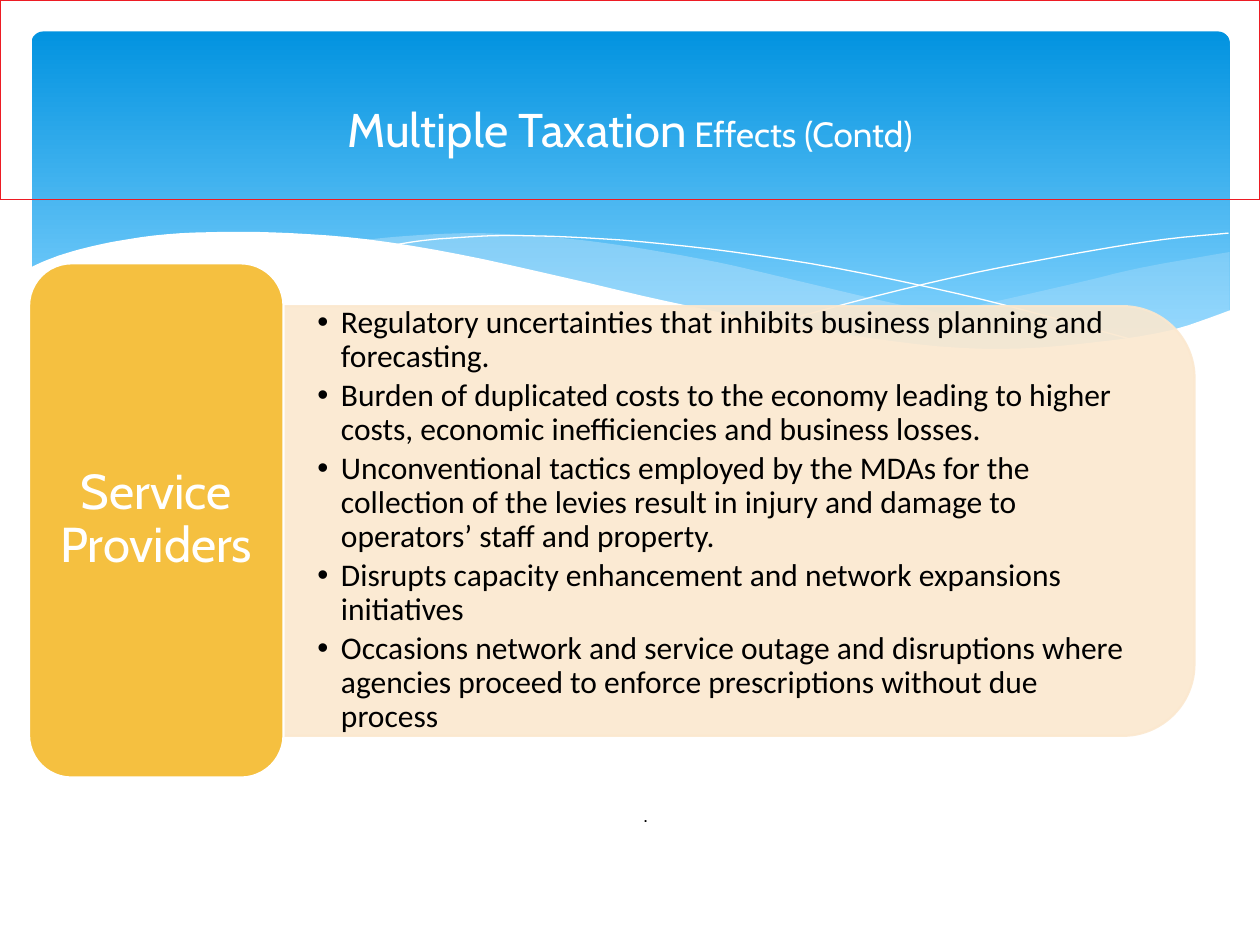
from lxml import etree
from pptx import Presentation
from pptx.dml.color import RGBColor
from pptx.enum.shapes import MSO_SHAPE
from pptx.enum.text import MSO_ANCHOR, PP_ALIGN
from pptx.oxml.ns import qn
from pptx.util import Pt

RECT = MSO_SHAPE.RECTANGLE
ROUND = MSO_SHAPE.ROUNDED_RECTANGLE
TAB = MSO_SHAPE.ROUND_2_SAME_RECTANGLE
MIDDLE, TOP = MSO_ANCHOR.MIDDLE, MSO_ANCHOR.TOP
CENTER, LEFT = PP_ALIGN.CENTER, PP_ALIGN.LEFT

HEX = {"deep": "0293E0", "sky": "83D3FE", "mist": "C6E7FC", "white": "FFFFFF",
       "red": "ED1C24", "cream": "FBE8CF", "gold": "F5C040", "black": "000000"}
RGB = {name: RGBColor.from_string(code) for name, code in HEX.items()}


def paint(shape, fill=None, line=None, width=0, alpha=None):
    """Set fill and line, with one opacity in percent for both."""
    shape.shadow.inherit = False
    for part, name in ((shape.fill, fill), (shape.line.fill, line)):
        if name is None:
            part.background()
            continue
        part.solid()
        part.fore_color.rgb = RGB[name]
    if line:
        shape.line.width = Pt(width)
    if alpha:
        for color in shape._element.spPr.iter(qn("a:srgbClr")):
            etree.SubElement(color, qn("a:alpha")).set("val", str(alpha * 1000))


def write(shape, paras, insets, font, anchor=MIDDLE, form=None):
    """Fill a text frame; each paragraph is a list of (text, size) runs."""
    frame = shape.text_frame
    left, top, right, bottom = map(Pt, insets)
    box = {"word_wrap": True, "vertical_anchor": anchor, "margin_left": left,
           "margin_top": top, "margin_right": right, "margin_bottom": bottom}
    for key, value in box.items():
        setattr(frame, key, value)
    for i, runs in enumerate(paras):
        para = frame.add_paragraph() if i else frame.paragraphs[0]
        for key, value in (form or {"alignment": CENTER}).items():
            setattr(para, key, value)
        for text, size in runs:
            run = para.add_run()
            run.text = text
            run.font.name, run.font.size = font[0], Pt(size)
            run.font.color.rgb = RGB[font[1]]


deck = Presentation()
deck.slide_width, deck.slide_height = Pt(720), Pt(540)
slide = deck.slides.add_slide(deck.slide_layouts[6])
shapes = slide.shapes

# Blue banner
banner = shapes.add_shape(ROUND, Pt(18), Pt(18), Pt(684.7), Pt(194.4))
banner.adjustments[0] = 0.034
paint(banner)
banner.fill.gradient()
banner.fill.gradient_angle = 270
for stop, (name, pos) in zip(banner.fill.gradient_stops,
                             (("deep", 0), ("sky", 0.9))):
    stop.color.rgb, stop.position = RGB[name], pos

# Waves: curves through key points, then straight corners
waves = [
    ([[(702.7, 144), (652, 153), (620, 160.6), (561, 174), (508, 185),
       (476, 190.8)],
      [(476, 190.8), (527, 197.3), (562, 199.4), (593, 199.4), (621, 198),
       (646, 194.4), (673, 189.4), (693, 181.5), (702.7, 177.8)]],
     [], {"fill": "mist", "alpha": 29}),
    ([[(643, 196.6), (602.6, 190.8), (558, 182.9), (508.3, 172.8),
       (452.9, 159.8), (409.7, 149.8), (370, 142.6), (334.8, 137.5),
       (302.4, 134.6), (273.6, 133.2), (247.7, 133.9), (225.4, 135.4),
       (205.9, 137.5)],
      [(205.9, 137.5), (246.2, 143.3), (290.9, 151.9), (323.3, 159.8),
       (381.6, 172.8), (432.7, 183.6), (478.8, 191.5), (520, 197.3),
       (556, 199.4), (589, 200.2), (617, 199.4), (643, 196.6)]],
     [], {"fill": "mist", "alpha": 40}),
    ([[(222.5, 140.4), (241.2, 137.5), (261.4, 135.8), (288.7, 134.6),
       (324, 135.4), (367.2, 138.2), (419, 144), (478.8, 153.4),
       (547.2, 167.8), (598.3, 180.7), (653, 195.8)]],
     [], {"line": "white"}),
    ([[(441.4, 185), (500.4, 169.2), (558.7, 155.5), (623.5, 143.3),
       (665.3, 136.8), (702, 133.2)]],
     [], {"line": "white"}),
    ([[(703.4, 177.1), (669.6, 188.6), (630, 195.1), (582.5, 199.2),
       (536.4, 198), (481, 190.8), (434.2, 182.9), (380.9, 172.1),
       (321.8, 158.4), (262.8, 145.4), (210.2, 136.8), (165.6, 133.2),
       (127.4, 132.5), (95, 133.9), (68.4, 137.5), (48.2, 141.8),
       (33.1, 146.2), (20.9, 151.2), (16.6, 153.4)]],
     [(16.6, 236.9), (703.4, 236.9)], {"fill": "white"}),
]
STEPS = 4
for curves, corners, style in waves:
    dots = []
    for keys in curves:
        ends = [keys[0], *keys, keys[-1]]
        for a, b, c, d in zip(ends, ends[1:], ends[2:], ends[3:]):
            for t in (n / STEPS for n in range(STEPS)):
                # Catmull-Rom spline from b to c
                dots.append(tuple(
                    q + t * (r - p) / 2 + t * t * (p - 2.5 * q + 2 * r - s / 2)
                    + t ** 3 * (s - p + 3 * (q - r)) / 2
                    for p, q, r, s in zip(a, b, c, d)))
        dots.append(keys[-1])
    grid = [(x * 10, y * 10) for x, y in dots + corners]
    path = shapes.build_freeform(*grid[0], scale=Pt(0.1))
    path.add_line_segments(grid[1:], close="fill" in style)
    paint(path.convert_to_shape(), **style)

# Title
title = shapes.add_shape(RECT, 0, 0, Pt(720), Pt(114))
paint(title, line="red", width=0.75)
write(title, [[("Multiple Taxation", 27), (" Effects (Contd)", 20)]],
      (7.2, 37, 7.2, 3.6), ("Cabin", "white"))

# Closing dot
dot = shapes.add_textbox(Pt(162), Pt(455.8), Pt(414), Pt(20))
write(dot, [[(".", 10.5)]], (7.2, 3.6, 7.2, 3.6), ("Arial", "black"), TOP)

# Effects panel, turned so that its round corners face right
panel = shapes.add_shape(TAB, Pt(299.5), Pt(37.4), Pt(245.5), Pt(520.6))
panel.rotation = 90
paint(panel, "cream", "cream", 1.25, 90)
effects = [
    "Regulatory uncertainties that inhibits business planning and forecasting.",
    "Burden of duplicated costs to the economy leading to higher costs, "
    "economic inefficiencies and business losses.",
    "Unconventional tactics employed by the MDAs for the collection of the "
    "levies result in injury and damage to operators’ staff and property.",
    "Disrupts capacity enhancement and network expansions initiatives",
    "Occasions network and service outage and disruptions where agencies "
    "proceed to enforce prescriptions without due process",
]
points = shapes.add_textbox(Pt(162), Pt(186.5), Pt(508.3), Pt(221.8))
write(points, [[(text, 18)] for text in effects], (19.4, 10, 19.4, 10),
      ("Calibri", "black"),
      form={"alignment": LEFT, "line_spacing": 0.9, "space_after": Pt(2.8)})
for para in points.text_frame.paragraphs:
    props = para._p.get_or_add_pPr()
    props.set("marL", str(Pt(13.5)))
    props.set("indent", str(-Pt(13.5)))
    etree.SubElement(props, qn("a:buFont")).set("typeface", "Arial")
    etree.SubElement(props, qn("a:buChar")).set("char", "•")

# Group label; the round corners already inset its text by about 7 points
label = shapes.add_shape(ROUND, Pt(16.6), Pt(150.5), Pt(145.4), Pt(293.8))
paint(label, "gold", "white", 1.25)
write(label, [[("Service Providers", 28)]], (7, 4, 7, 4),
      ("Cabin", "white"), form={"alignment": CENTER, "line_spacing": 0.9})

deck.save("out.pptx")
